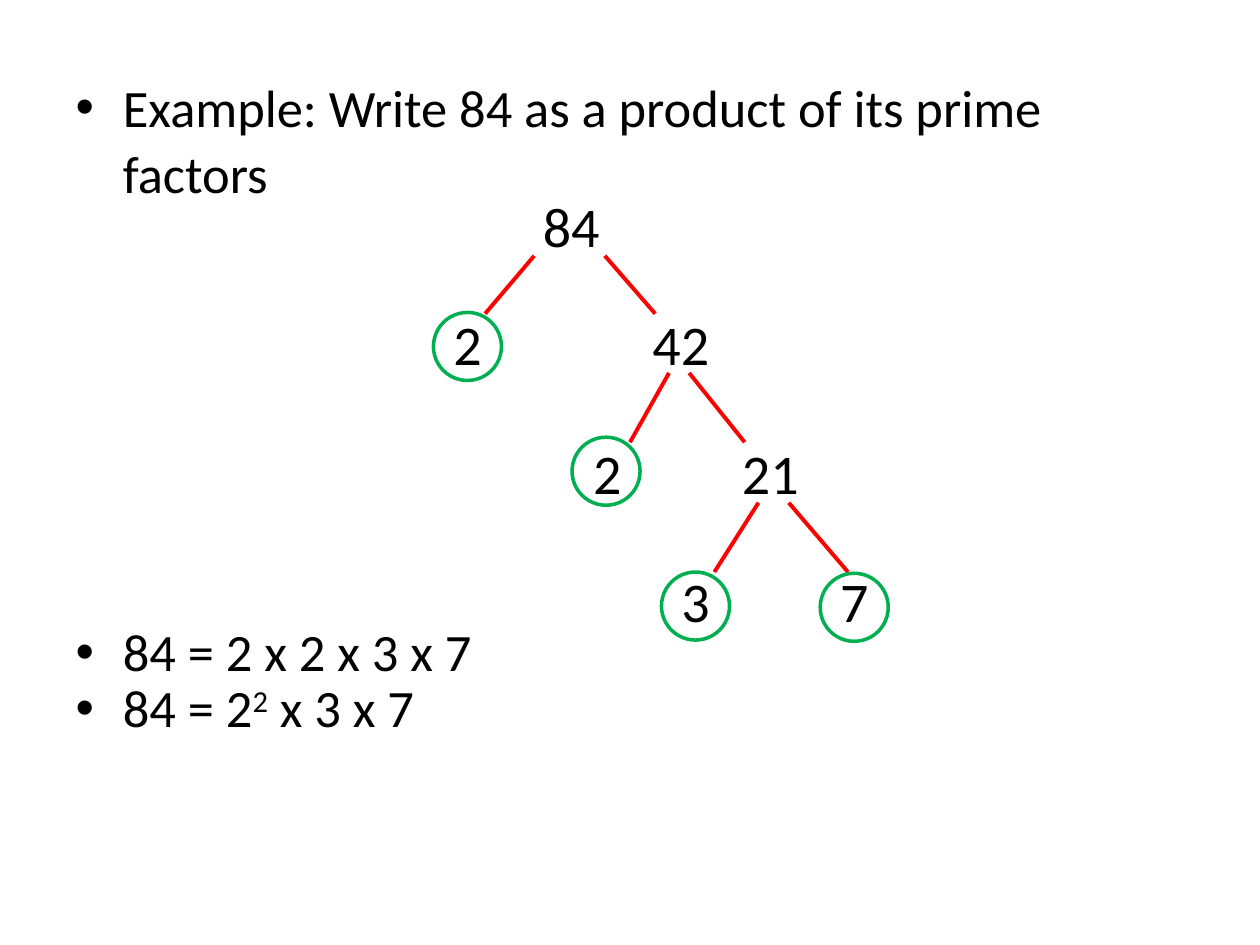
"""Build a slide showing the prime factor tree of 84."""
from pptx import Presentation
from pptx.dml.color import RGBColor
from pptx.enum.shapes import MSO_CONNECTOR as CONN, MSO_SHAPE as SHAPE
from pptx.enum.text import MSO_ANCHOR as ANCHOR, MSO_AUTO_SIZE as FIT
from pptx.oxml.ns import qn
from pptx.util import Inches, Pt


def rgb(value):
    return RGBColor.from_string(value)


def add_text(p, text, size=30, color="000000", font="Calibri", baseline=0):
    r = p.add_run()
    r.text = text
    r.font.size = Pt(size)
    r.font.name = font
    r.font.color.rgb = rgb(color)
    if baseline:
        r.font._element.set("baseline", str(baseline * 1000))


prs = Presentation()
prs.slide_width, prs.slide_height = Inches(10), Inches(7.5)
s = prs.slides.add_slide(prs.slide_layouts[1])
title = s.shapes.title._element
title.getparent().remove(title)

body = s.placeholders[1]
body.left, body.top = Inches(0.5), Inches(0.52)
body.width, body.height = Inches(9), Inches(6.18)
tf = body.text_frame
tf.auto_size = FIT.NONE
tf.vertical_anchor = ANCHOR.TOP
lines = [
    ([("Example: Write 84 as a product of its prime factors", 0)], 1.05, 0),
    ([("84 = 2 x 2 x 3 x 7", 0)], 0.9, 241),
    ([("84 = 2", 0), ("2", 30), (" x 3 x 7", 0)], 0.9, 0),
]
for i, (runs, spacing, before) in enumerate(lines):
    p = tf.add_paragraph() if i else tf.paragraphs[0]
    p.line_spacing = spacing
    p.space_before = Pt(before)
    for text, baseline in runs:
        add_text(p, text, baseline=baseline)

numbers = [
    ("84", 4.21, 1.47), ("2", 3.5, 2.41), ("42", 5.08, 2.41), ("2", 4.61, 3.43),
    ("21", 5.79, 3.43), ("3", 5.31, 4.45), ("7", 6.57, 4.45),
]
for text, x, y in numbers:
    sp = s.shapes.add_textbox(Inches(x), Inches(y), Inches(1.18), Inches(0.64))
    sp.text_frame.word_wrap = True
    sp.text_frame.auto_size = FIT.SHAPE_TO_FIT_TEXT
    add_text(sp.text_frame.paragraphs[0], text, size=32)

levels = [
    (2.03, 2.49, [(4.24, 3.85), (4.8, 5.2)]),
    (2.96, 3.51, [(5.31, 5), (5.47, 5.91)]),
    (3.99, 4.54, [(6.02, 5.67), (6.26, 6.73)]),
]
for top, bottom, branches in levels:
    for x1, x2 in branches:
        branch = s.shapes.add_connector(
            CONN.STRAIGHT, Inches(x1), Inches(top), Inches(x2), Inches(bottom))
        branch.line.color.rgb = rgb("FF0000")
        branch.line.width = Pt(2.25)
        sp_pr = branch._element.spPr
        sp_pr.append(sp_pr.makeelement(qn("a:effectLst"), {}))

for x, y in [(3.44, 2.48), (4.54, 3.47), (5.25, 4.54), (6.51, 4.55)]:
    ring = s.shapes.add_shape(
        SHAPE.OVAL, Inches(x), Inches(y), Inches(0.54), Inches(0.54))
    ring.shadow.inherit = False
    ring.fill.background()
    ring.line.color.rgb = rgb("00B050")
    ring.line.width = Pt(2)

prs.save("out.pptx")
